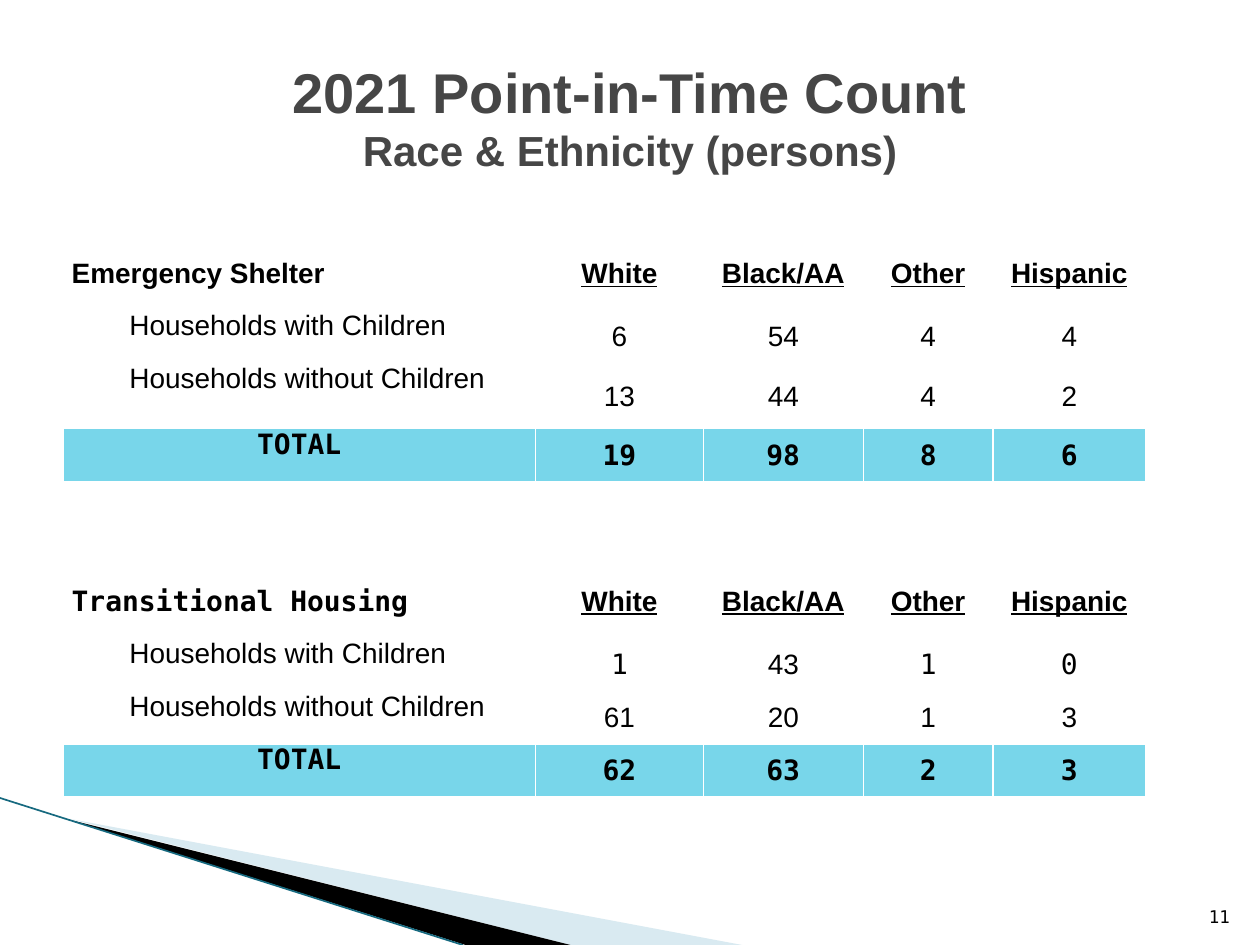
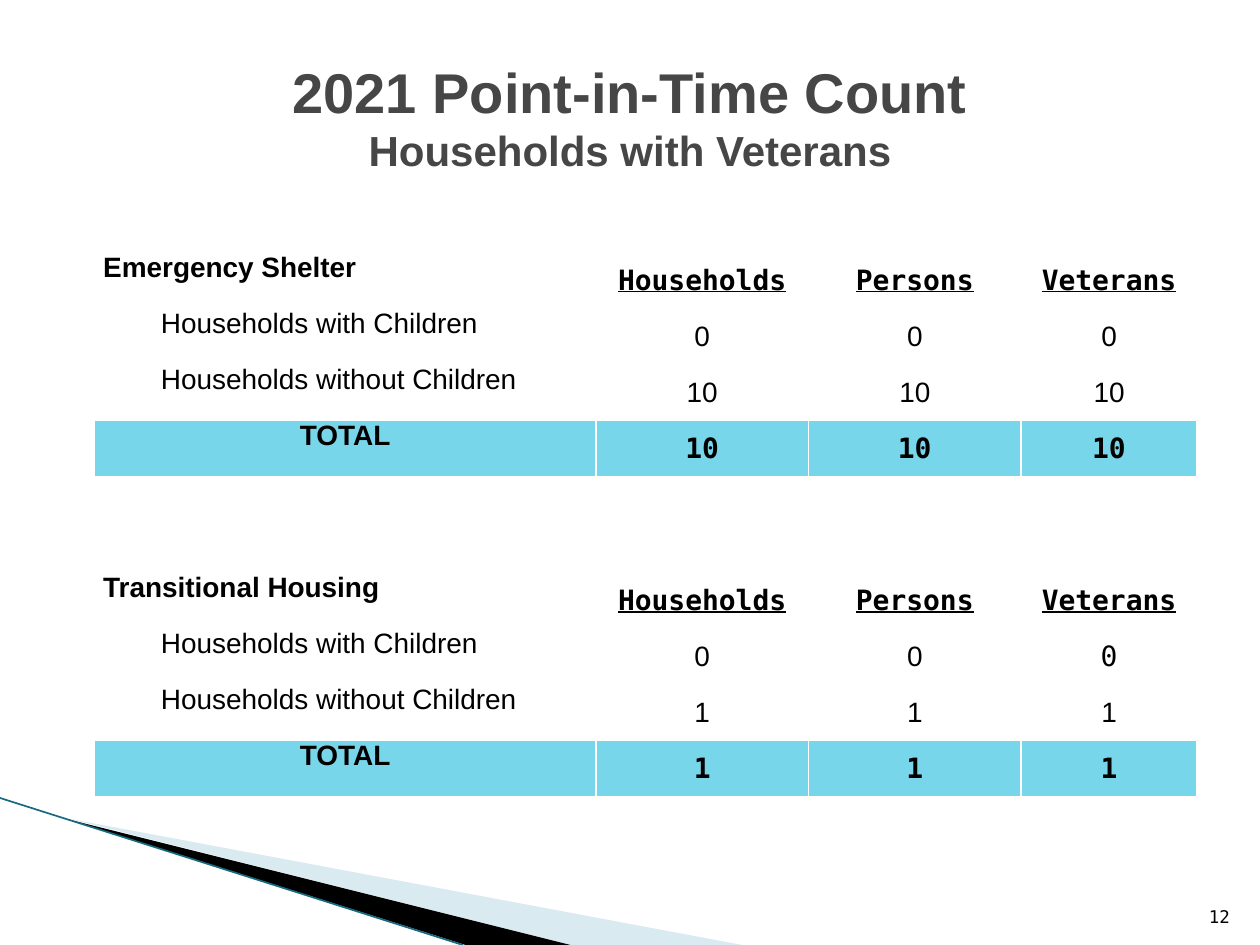
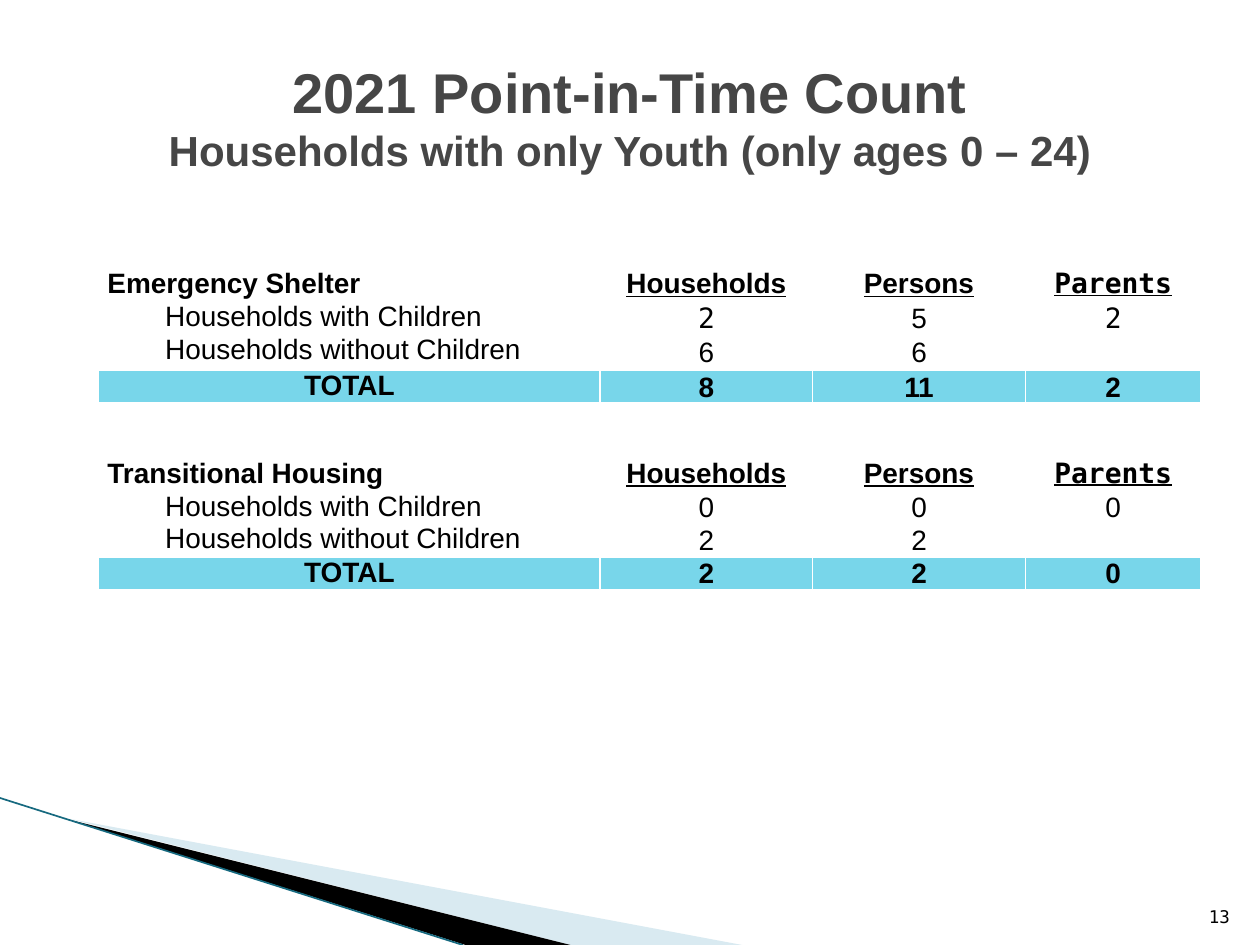
from lxml import etree
from pptx import Presentation
from pptx.dml.color import RGBColor
from pptx.enum.shapes import MSO_CONNECTOR
from pptx.enum.text import MSO_ANCHOR, MSO_AUTO_SIZE, PP_ALIGN
from pptx.oxml import parse_xml
from pptx.oxml.ns import nsdecls, qn
from pptx.util import Pt

TOP, MIDDLE, BOTTOM = MSO_ANCHOR.TOP, MSO_ANCHOR.MIDDLE, MSO_ANCHOR.BOTTOM
LEFT, CENTER, RIGHT = PP_ALIGN.LEFT, PP_ALIGN.CENTER, PP_ALIGN.RIGHT
STRAIGHT = MSO_CONNECTOR.STRAIGHT
NO_FIT = MSO_AUTO_SIZE.NONE

SANS, MONO = "Arial", "DejaVu Sans Mono"
BLACK, WHITE, TITLE_GREY = "000000", "FFFFFF", "464646"
TOTAL_BLUE, PALE_BLUE, TEAL = "78D6EA", "A0CBDC", "16697F"

TITLE = "2021 Point-in-Time Count"
FIRST_NUMBER = 11
WITH, WITHOUT, TOTAL = "Households with Children", "Households without Children", "TOTAL"
GAP_ROWS = 2

# A leading "~" sets a cell in the monospaced font.
SLIDES = [
    {
        "subtitle": "Race & Ethnicity (persons)",
        "at": (36, 147.6),
        "cols": [270, 95.9, 91.4, 74.2, 87.1],
        "heights": [29.6, 30.2, 37.6, 30.2, 29.8, 29.8, 30, 30.2, 30.2, 30.4],
        "heads": ["White", "Black/AA", "Other", "Hispanic"],
        "head_anchor": TOP,
        "blocks": [
            ("Emergency Shelter", [
                [WITH, "6", "54", "4", "4"],
                [WITHOUT, "13", "44", "4", "2"],
                ["~" + TOTAL, "~19", "~98", "~8", "~6"]]),
            ("~Transitional Housing", [
                [WITH, "~1", "43", "~1", "~0"],
                [WITHOUT, "61", "20", "1", "3"],
                ["~" + TOTAL, "~62", "~63", "~2", "~3"]]),
        ],
    },
    {
        "subtitle": "Households with Veterans",
        "at": (54, 144),
        "cols": [286.5, 121.5, 121.5, 100.5],
        "heights": [32.1] * 4 + [27.3] * GAP_ROWS + [32.1] * 4,
        "heads": ["~Households", "~Persons", "~Veterans"],
        "head_anchor": MIDDLE,
        "blocks": [
            ("Emergency Shelter", [
                [WITH, "0", "0", "0"],
                [WITHOUT, "10", "10", "10"],
                [TOTAL, "~10", "~10", "~10"]]),
            ("Transitional Housing", [
                [WITH, "0", "0", "~0"],
                [WITHOUT, "1", "1", "1"],
                [TOTAL, "~1", "~1", "~1"]]),
        ],
    },
    {
        "subtitle": "Households with only Youth (only ages 0 – 24)",
        "at": (56.4, 153.2),
        "cols": [286.5, 121.5, 121.5, 100.5],
        "heights": [18.9, 18.9, 20.5, 18.5, 15.7, 15.7, 18.9, 18.5, 19.4, 18.5] + [21] * 6,
        "heads": ["Households", "Persons", "~Parents"],
        "head_anchor": TOP,
        "blocks": [
            ("Emergency Shelter", [
                [WITH, "~2", "5", "~2"],
                [WITHOUT, "6", "6", ""],
                [TOTAL, "8", "11", "2"]]),
            ("Transitional Housing", [
                [WITH, "0", "0", "0"],
                [WITHOUT, "2", "2", ""],
                [TOTAL, "2", "2", "0"]]),
        ],
    },
]

PALE_WEDGE = [(39.6, 468.4), (424.5, 540), (325.8, 540)]
BLACK_WEDGE = [(38.2, 467.5), (325.8, 540), (265.5, 540)]
EDGE = (0, 456, 264.5, 540)


def rgb(color):
    return RGBColor.from_string(color)


def style(font, size, color, name=SANS, bold=False, underline=False):
    font.name, font.size, font.bold, font.underline = name, Pt(size), bold, underline
    font.color.rgb = rgb(color)


def add_wedge(s, points, color):
    builder = s.shapes.build_freeform(*points[0], scale=float(Pt(1)))
    builder.add_line_segments(points[1:])
    sp = builder.convert_to_shape()
    sp.shadow.inherit = False
    sp.fill.solid()
    sp.fill.fore_color.rgb = rgb(color)
    sp.line.fill.background()
    return sp


def add_corner_band(s):
    pale = add_wedge(s, PALE_WEDGE, PALE_BLUE)
    color = pale.fill._xPr.find(".//" + qn("a:srgbClr"))
    etree.SubElement(color, qn("a:alpha")).set("val", "40000")
    add_wedge(s, BLACK_WEDGE, BLACK)
    edge = s.shapes.add_connector(STRAIGHT, *map(Pt, EDGE))
    edge.line.color.rgb = rgb(TEAL)
    edge.line.width = Pt(0.95)
    etree.SubElement(edge._element.spPr, qn("a:effectLst"))


def set_title(s, subtitle):
    sp = s.shapes.title
    sp.left, sp.top, sp.width, sp.height = map(Pt, (36, 21.6, 648, 90))
    tf = sp.text_frame
    tf.auto_size, tf.vertical_anchor = NO_FIT, MIDDLE
    p = tf.paragraphs[0]
    p.alignment = CENTER
    for text, size in ((TITLE, 32), (subtitle, 24)):
        if p.runs:
            p.add_line_break()
        r = p.add_run()
        r.text = text
        style(r.font, size, TITLE_GREY, bold=True)


def add_number(s, number):
    tf = s.shapes.add_textbox(*map(Pt, (681.1, 504.7, 28.8, 28.8))).text_frame
    tf.word_wrap, tf.vertical_anchor = True, BOTTOM
    p = tf.paragraphs[0]
    p.text, p.alignment = str(number), RIGHT
    style(p.font, 10, BLACK, MONO)


def add_borders(cell):
    tcPr = cell._tc.get_or_add_tcPr()
    for i, side in enumerate(("lnL", "lnR", "lnT", "lnB")):
        tcPr.insert(i, parse_xml(
            f'<a:{side} {nsdecls("a")} w="{Pt(1)}"><a:solidFill>'
            f'<a:srgbClr val="{WHITE}"/></a:solidFill></a:{side}>'))


def fill_cell(cell, text, column, kind, head_anchor):
    """Write one cell; kind is head, body, total or blank."""
    is_label = column == 0
    top = is_label or (kind == "head" and head_anchor == TOP)
    cell.vertical_anchor = TOP if top else MIDDLE
    cell.margin_left = cell.margin_right = Pt(5 if top else 0.7)
    cell.margin_top, cell.margin_bottom = Pt(0 if top else 0.7), 0
    cell.fill.solid()
    cell.fill.fore_color.rgb = rgb(TOTAL_BLUE if kind == "total" else WHITE)
    add_borders(cell)
    p = cell.text_frame.paragraphs[0]
    if not text:
        p._p.get_or_add_endParaRPr().set("sz", "800")
        return
    p.text = text.lstrip("~")
    p.alignment = LEFT if is_label and kind != "total" else CENTER
    if is_label and kind == "body":
        p._p.get_or_add_pPr().set("indent", str(Pt(33)))
    style(p.font, 16, BLACK, MONO if text.startswith("~") else SANS,
          bold=kind != "body", underline=kind == "head" and not is_label)


def table_rows(data):
    """Return (kind, texts) for each row, with blank rows between and after blocks."""
    blank = ("blank", [""] * len(data["cols"]))
    rows = []
    for name, body in data["blocks"]:
        if rows:
            rows += [blank] * GAP_ROWS
        rows.append(("head", [name] + data["heads"]))
        rows += [("body", texts) for texts in body[:-1]]
        rows.append(("total", body[-1]))
    return rows + [blank] * (len(data["heights"]) - len(rows))


def add_count_table(s, data):
    rows, cols, heights = table_rows(data), data["cols"], data["heights"]
    box = (*data["at"], sum(cols), sum(heights))
    table = s.shapes.add_table(len(rows), len(cols), *map(Pt, box)).table
    table.first_row = table.horz_banding = False
    for column, width in zip(table.columns, cols):
        column.width = Pt(width)
    for i, (kind, texts) in enumerate(rows):
        table.rows[i].height = Pt(heights[i])
        for j, text in enumerate(texts):
            fill_cell(table.cell(i, j), text, j, kind, data["head_anchor"])


def main():
    prs = Presentation()
    prs.slide_width, prs.slide_height = Pt(720), Pt(540)
    title_only = prs.slide_layouts[5]
    for number, data in enumerate(SLIDES, FIRST_NUMBER):
        s = prs.slides.add_slide(title_only)
        add_corner_band(s)
        set_title(s, data["subtitle"])
        add_count_table(s, data)
        add_number(s, number)
    prs.save("out.pptx")


if __name__ == "__main__":
    main()
